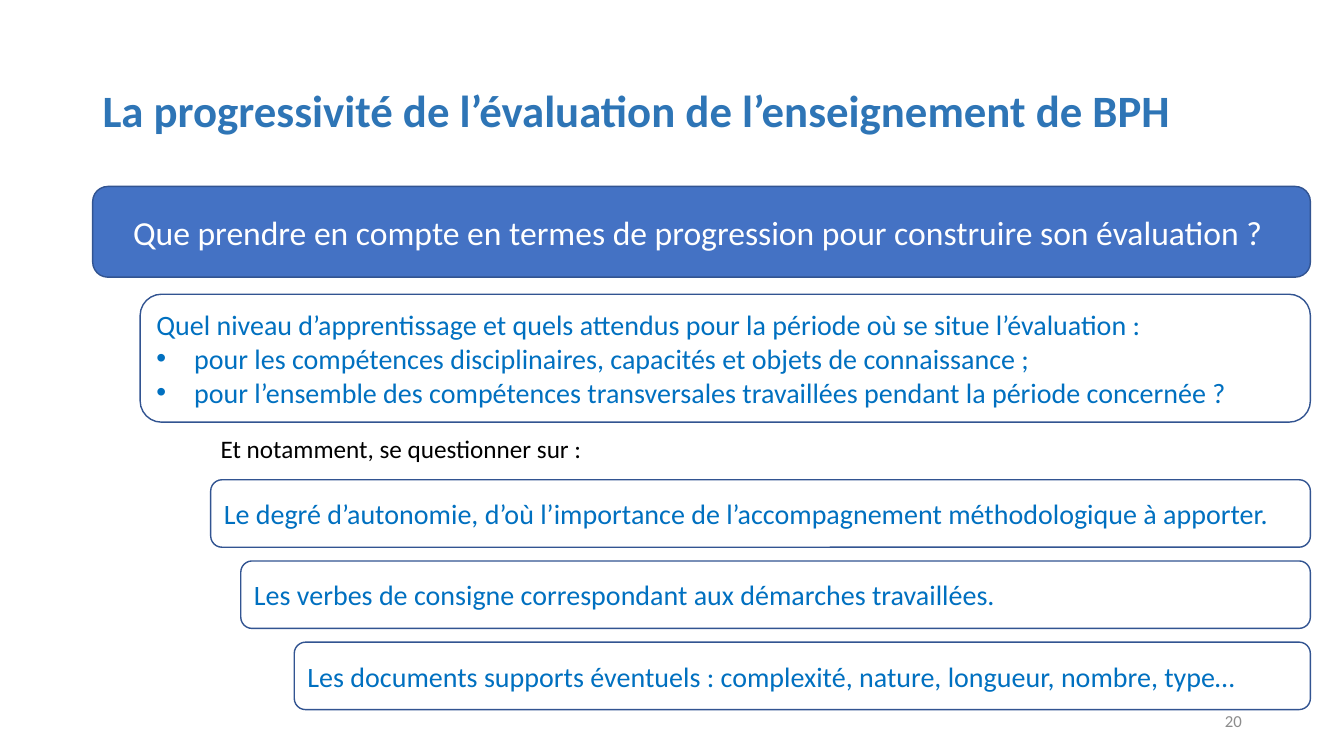
from dataclasses import dataclass

from lxml import etree
from pptx import Presentation
from pptx.dml.color import RGBColor
from pptx.enum import shapes, text
from pptx.oxml import ns
from pptx.slide import Slide
from pptx.util import Pt

COLOURS = {
    "title": "2E75B6",
    "banner": "4472C4",
    "outline": "325491",
    "body": "0070C0",
    "white": "FFFFFF",
    "black": "000000",
    "number": "8C8C8C",
}
RIGHT_EDGE = 936
STEP_TOP, STEP_PITCH, STEP_HEIGHT = 342.7, 58, 48.2
BULLET_INDENT = 27


@dataclass(frozen=True)
class Block:
    lines: tuple[str, ...]
    left: float
    top: float
    width: float
    height: float
    size: float
    colour: str
    bold: bool = False
    align: text.PP_ALIGN = text.PP_ALIGN.LEFT
    anchor: text.MSO_ANCHOR = text.MSO_ANCHOR.MIDDLE
    line_spacing: float = 1.0
    boxed: bool = False
    fill: str | None = None
    bulleted_from: int = 99


def colour(name: str) -> RGBColor:
    return RGBColor.from_string(COLOURS[name])


def add_bullet(paragraph) -> None:
    properties = paragraph._p.get_or_add_pPr()
    properties.set("marL", str(Pt(BULLET_INDENT)))
    properties.set("indent", str(-Pt(BULLET_INDENT)))
    font = etree.SubElement(properties, ns.qn("a:buFont"))
    font.set("typeface", "Arial")
    bullet = etree.SubElement(properties, ns.qn("a:buChar"))
    bullet.set("char", "•")


def draw_block(slide: Slide, block: Block) -> None:
    frame = [Pt(n) for n in (block.left, block.top, block.width, block.height)]
    if block.boxed:
        shape = slide.shapes.add_shape(
            shapes.MSO_SHAPE.ROUNDED_RECTANGLE, *frame)
        shape.shadow.inherit = False
        shape.line.color.rgb = colour("outline")
        shape.line.width = Pt(1)
        if block.fill:
            shape.fill.solid()
            shape.fill.fore_color.rgb = colour(block.fill)
        else:
            shape.fill.background()
    else:
        shape = slide.shapes.add_textbox(*frame)
    text_frame = shape.text_frame
    text_frame.word_wrap = True
    text_frame.vertical_anchor = block.anchor
    text_frame.text = "\n".join(block.lines)
    for index, paragraph in enumerate(text_frame.paragraphs):
        paragraph.alignment = block.align
        paragraph.line_spacing = block.line_spacing
        paragraph.font.name = "Calibri"
        paragraph.font.size = Pt(block.size)
        paragraph.font.bold = block.bold
        paragraph.font.color.rgb = colour(block.colour)
        if index >= block.bulleted_from:
            add_bullet(paragraph)


def box(lines: tuple[str, ...], left: float, top: float, height: float,
        size: float = 20, colour: str = "body", **options) -> Block:
    return Block(lines, left, top, RIGHT_EDGE - left, height, size, colour,
                 boxed=True, **options)


STEPS = (
    (150.5, "Le degré d’autonomie, d’où l’importance de l’accompagnement "
            "méthodologique à apporter."),
    (172, "Les verbes de consigne correspondant aux démarches travaillées."),
    (210.2, "Les documents supports éventuels : complexité, nature, "
            "longueur, nombre, type…"),
)

BLOCKS = (
    Block(("La progressivité de l’évaluation de l’enseignement de BPH",),
          66.2, 28.8, 828, 104.4, 32, "title", bold=True, line_spacing=0.9),
    Block(("20",), 678.2, 500.4, 216, 28.8, 12, "number",
          align=text.PP_ALIGN.RIGHT),
    box(("Que prendre en compte en termes de progression pour construire "
         "son évaluation ? ",),
        66.2, 133.2, 64.8, 24, "white", fill="banner",
        align=text.PP_ALIGN.CENTER),
    box(("Quel niveau d’apprentissage et quels attendus pour la période "
         "où se situe l’évaluation :",
         "pour les compétences disciplinaires, capacités et objets de "
         "connaissance ;",
         "pour l’ensemble des compétences transversales travaillées pendant "
         "la période concernée ?"),
        100.1, 210.2, 91.4, bulleted_from=1),
    Block(("Et notamment, se questionner sur :",),
          150.5, 306, 425.5, 28.8, 18, "black", anchor=text.MSO_ANCHOR.TOP),
    *(box((wording,), left, STEP_TOP + index * STEP_PITCH, STEP_HEIGHT)
      for index, (left, wording) in enumerate(STEPS)),
)


def main() -> None:
    presentation = Presentation()
    presentation.slide_width = Pt(960)
    presentation.slide_height = Pt(540)
    slide = presentation.slides.add_slide(presentation.slide_layouts[6])
    for block in BLOCKS:
        draw_block(slide, block)
    presentation.save("out.pptx")


if __name__ == "__main__":
    main()
